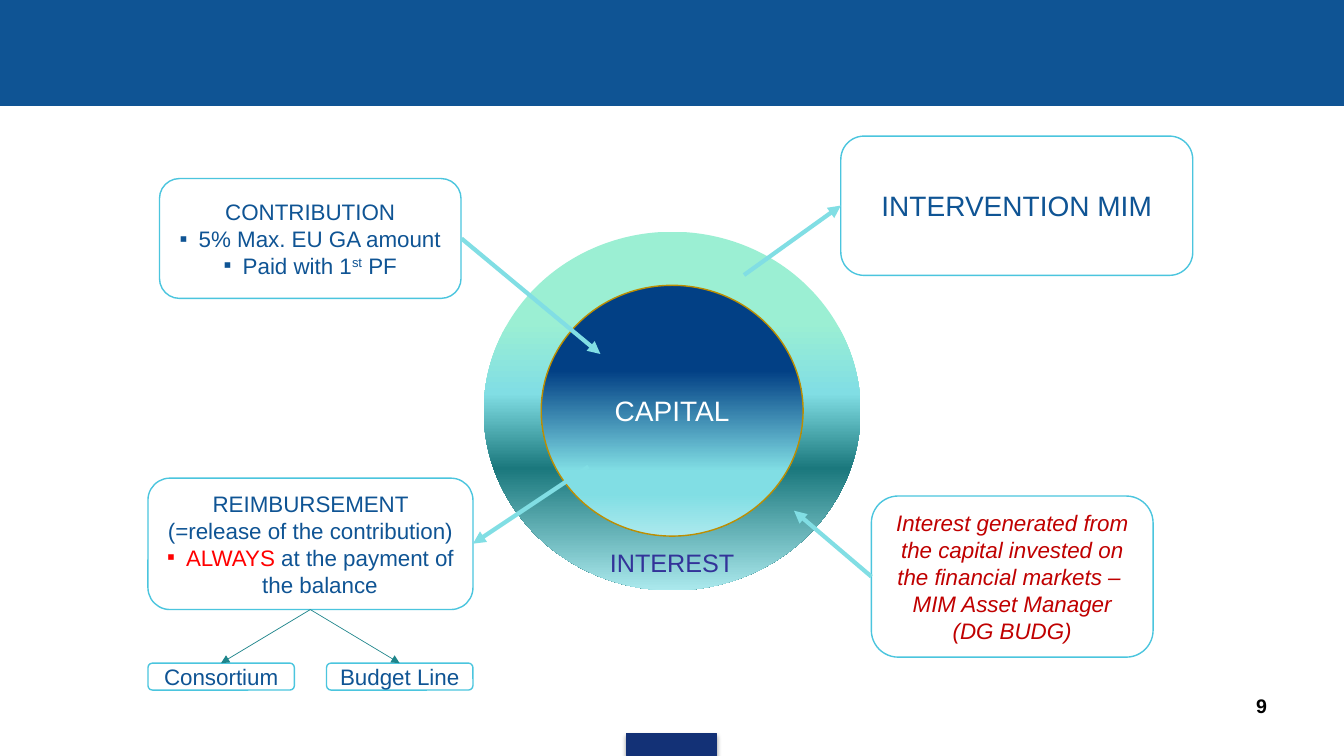
from dataclasses import dataclass

from lxml import etree
from pptx import Presentation
from pptx.dml.color import RGBColor
from pptx.enum.shapes import MSO_CONNECTOR, MSO_SHAPE
from pptx.enum.text import MSO_ANCHOR, PP_ALIGN
from pptx.oxml.ns import qn
from pptx.util import Cm, Pt

RECT, OVAL, ROUND = MSO_SHAPE.RECTANGLE, MSO_SHAPE.OVAL, MSO_SHAPE.ROUNDED_RECTANGLE
LINE = MSO_CONNECTOR.STRAIGHT
MID, TOP = MSO_ANCHOR.MIDDLE, MSO_ANCHOR.TOP
CENTER, RIGHT = PP_ALIGN.CENTER, PP_ALIGN.RIGHT

HUES = {
    "blue": "0F5494", "navy": "133176", "white": "FFFFFF", "black": "000000",
    "edge": "4BC5DE", "aqua": "81DEE4", "teal": "1E858B", "gold": "BD8E00",
    "violet": "333399", "crimson": "C00000", "red": "FF0000",
    "mint": "9BEFD3", "deep": "1B787D", "pale": "ABE9ED", "royal": "024085",
}


@dataclass
class Run:
    text: str
    hue: str = ""
    raised: bool = False


@dataclass
class Para:
    runs: list[Run]
    bullet: bool = False


@dataclass
class Style:
    size: float = 16
    hue: str = "blue"
    bold: bool = False
    slant: bool = False
    align: PP_ALIGN = CENTER


@dataclass
class Box:
    area: tuple[float, float, float, float]
    paras: list[Para]
    style: Style


@dataclass
class Arrow:
    start: tuple[float, float]
    end: tuple[float, float]
    hue: str = "aqua"
    width: float = 3


def color(hue: str) -> RGBColor:
    return RGBColor.from_string(HUES[hue])


def plain(text: str) -> Para:
    return Para([Run(text)])


def add_mark(para) -> None:
    props = para._p.get_or_add_pPr()
    props.set("marL", str(Cm(0.48)))
    props.set("indent", str(-Cm(0.48)))
    etree.SubElement(props, qn("a:buFont")).set("typeface", "Arial")
    etree.SubElement(props, qn("a:buChar")).set("char", "▪")


def write(frame, paras: list[Para], style: Style, anchor=MID) -> None:
    frame.word_wrap = True
    frame.vertical_anchor = anchor
    for i, item in enumerate(paras):
        para = frame.add_paragraph() if i else frame.paragraphs[0]
        para.alignment = style.align
        if item.bullet:
            add_mark(para)
        font = para.font
        font.name, font.size = "Arial", Pt(style.size)
        font.bold, font.italic = style.bold, style.slant
        font.color.rgb = color(style.hue)
        for part in item.runs:
            run = para.add_run()
            run.text = part.text
            if part.hue:
                run.font.color.rgb = color(part.hue)
            if part.raised:
                run._r.get_or_add_rPr().set("baseline", "30000")


def add_form(slide, kind, area, fill: str = "", line: str = "", width: float = 1):
    form = slide.shapes.add_shape(kind, *map(Cm, area))
    form.shadow.inherit = False
    if fill:
        form.fill.solid()
        form.fill.fore_color.rgb = color(fill)
    if line:
        form.line.color.rgb = color(line)
        form.line.width = Pt(width)
    else:
        form.line.fill.background()
    return form


def add_box(slide, box: Box) -> None:
    form = add_form(slide, ROUND, box.area, "white", "edge")
    write(form.text_frame, box.paras, box.style)


def add_label(slide, area, text: str, style: Style, anchor=MID) -> None:
    label = slide.shapes.add_textbox(*map(Cm, area))
    write(label.text_frame, [plain(text)], style, anchor)


def shade(form, stops: list[tuple[int, str]]) -> None:
    form.fill.gradient()
    form.fill.gradient_angle = 270
    group = form._element.spPr.find(".//" + qn("a:gsLst"))
    for old in list(group):
        group.remove(old)
    for spot, hue in stops:
        stop = etree.SubElement(group, qn("a:gs"), pos=str(spot * 1000))
        etree.SubElement(stop, qn("a:srgbClr"), val=HUES[hue])


def add_shadow(form) -> None:
    effects = form._element.spPr.find(qn("a:effectLst"))
    cast = etree.SubElement(effects, qn("a:outerShdw"), blurRad=str(Pt(3.1)),
                            dist=str(Pt(1.8)), dir="5400000", rotWithShape="0")
    tint = etree.SubElement(cast, qn("a:srgbClr"), val=HUES["black"])
    etree.SubElement(tint, qn("a:alpha"), val="35000")


def add_arrow(slide, arrow: Arrow) -> None:
    link = slide.shapes.add_connector(LINE, *map(Cm, arrow.start + arrow.end))
    link.line.color.rgb = color(arrow.hue)
    link.line.width = Pt(arrow.width)
    etree.SubElement(link.line._get_or_add_ln(), qn("a:tailEnd"), type="triangle")
    etree.SubElement(link._element.spPr, qn("a:effectLst"))


BOXES = [
    Box((4.02, 4.5, 7.6, 3.02), [
        plain("CONTRIBUTION"),
        Para([Run("5% Max. EU GA amount")], bullet=True),
        Para([Run("Paid with 1"), Run("st", raised=True), Run(" PF")], bullet=True),
    ], Style()),
    Box((21.96, 12.5, 7.1, 4.06), [
        plain("Interest generated from the capital invested on the financial markets – "),
        plain("MIM Asset Manager"),
        plain("(DG BUDG)"),
    ], Style(hue="crimson", slant=True)),
    Box((3.73, 12.05, 8.19, 3.31), [
        plain("REIMBURSEMENT (=release of the contribution)"),
        Para([Run("ALWAYS", "red"), Run(" at the payment of the balance")], bullet=True),
    ], Style()),
    Box((21.19, 3.43, 8.87, 3.51), [plain("INTERVENTION MIM")], Style(20)),
]
BOXES += [Box((3.73 + 4.5 * i, 16.71, 3.69, 0.68), [plain(name)], Style())
          for i, name in enumerate(["Consortium", "Budget Line"])]

FORK = (7.82, 15.36)
ARROWS = [
    Arrow((11.63, 6.01), (15.13, 8.92)),
    Arrow((21.96, 14.53), (20.01, 12.87)),
    Arrow((14.83, 11.76), (11.92, 13.7)),
    Arrow((18.75, 6.93), (21.19, 5.18)),
    Arrow(FORK, (5.57, 16.71), "teal", 0.5),
    Arrow(FORK, (10.07, 16.71), "teal", 0.5),
]


def main() -> None:
    deck = Presentation()
    deck.slide_width, deck.slide_height = Cm(33.87), Cm(19.05)
    slide = deck.slides.add_slide(deck.slide_layouts[6])

    # Header band, footer tab and page number
    add_form(slide, RECT, (0, 0, 33.87, 2.67), "blue", "blue", 0.75)
    add_shadow(add_form(slide, RECT, (15.79, 18.49, 2.27, 0.56), "navy", "navy", 0.75))
    add_label(slide, (24.28, 17.35, 7.9, 1.32), "9",
              Style(14, "black", bold=True, align=RIGHT), TOP)

    # Interest ring around the capital
    ring = add_form(slide, OVAL, (12.19, 5.84, 9.5, 9.04))
    shade(ring, [(25, "mint"), (45, "aqua"), (66, "deep"), (100, "pale")])
    core = add_form(slide, OVAL, (13.64, 7.19, 6.6, 6.32), line="gold")
    shade(core, [(34, "royal"), (74, "aqua"), (83, "aqua"), (100, "pale")])
    write(core.text_frame, [plain("CAPITAL")], Style(20, "white"))
    add_label(slide, (14.44, 13.67, 5, 1.02), "INTEREST", Style(18, "violet"))

    # Notes and the flows between them
    for box in BOXES:
        add_box(slide, box)
    for arrow in ARROWS:
        add_arrow(slide, arrow)

    deck.save("out.pptx")


if __name__ == "__main__":
    main()
